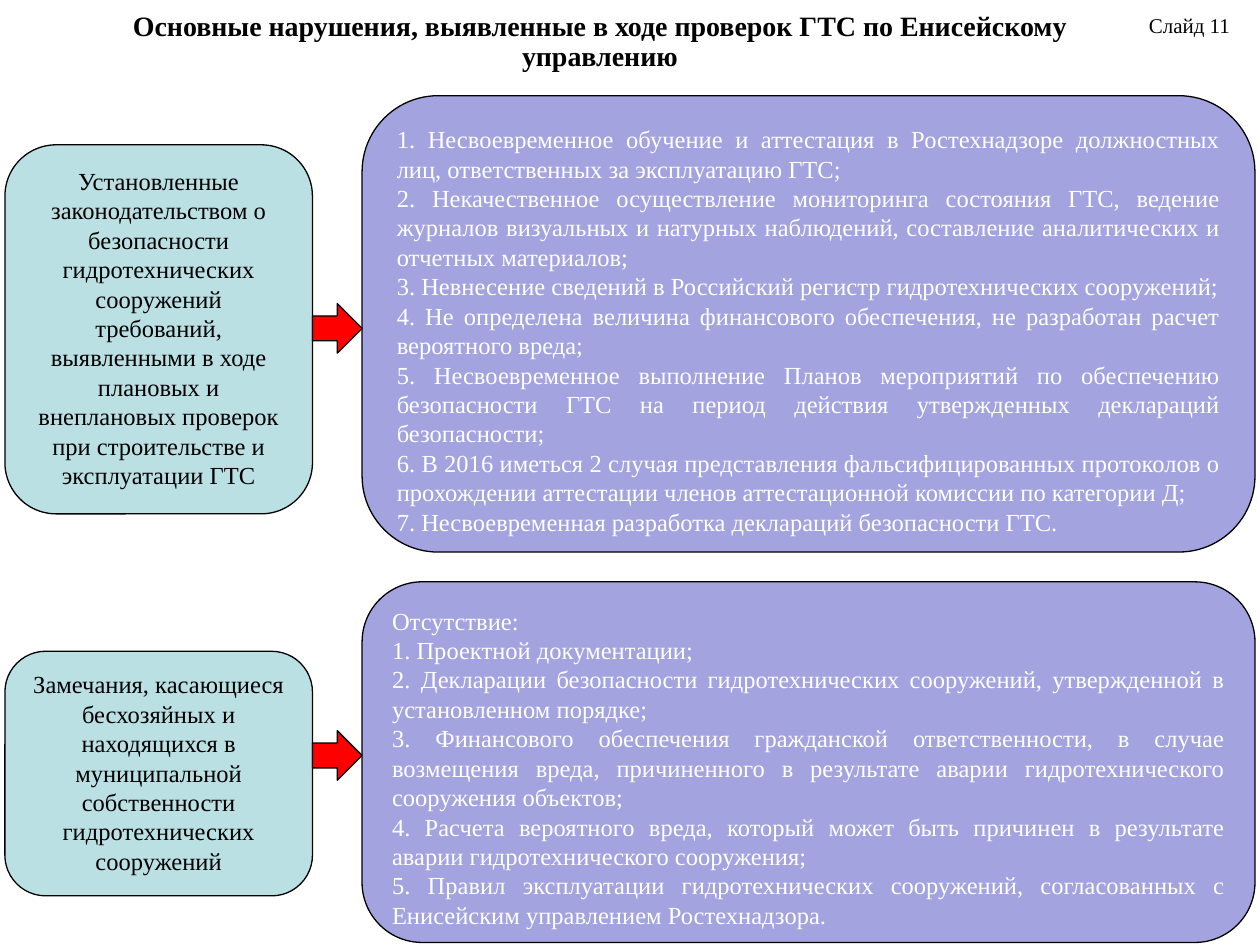
from pptx import Presentation
from pptx import util as u
from pptx.dml import color
from pptx.enum import shapes, text

COLORS = {
    "ink": "000000",
    "topic": "BBE0E3",
    "panel": "A3A3E0",
    "panel_text": "FFFFFF",
    "arrow": "FF0000",
}
FONT = "Times New Roman"


def write(frame, paragraphs, size, ink, align, bold=False, spacing=None):
    frame.word_wrap = True
    frame.vertical_anchor = text.MSO_ANCHOR.TOP
    for number, wording in enumerate(paragraphs):
        paragraph = frame.add_paragraph() if number else frame.paragraphs[0]
        paragraph.alignment = align
        if spacing:
            paragraph.line_spacing = spacing
        run = paragraph.add_run()
        run.text = wording
        run.font.name = FONT
        run.font.size = u.Pt(size)
        run.font.bold = bold
        run.font.color.rgb = color.RGBColor.from_string(COLORS[ink])


def add_block(kind, left, top, width, height, fill):
    block = slide.shapes.add_shape(kind, u.Cm(left), u.Cm(top), u.Cm(width), u.Cm(height))
    block.shadow.inherit = False
    block.fill.solid()
    block.fill.fore_color.rgb = color.RGBColor.from_string(COLORS[fill])
    block.line.color.rgb = color.RGBColor.from_string(COLORS["ink"])
    block.line.width = u.Pt(0.75)
    return block


prs = Presentation()
prs.slide_width, prs.slide_height = u.Cm(25.4), u.Cm(19.05)
slide = prs.slides.add_slide(prs.slide_layouts[6])

# Slide number and heading
slide_label = slide.shapes.add_textbox(u.Cm(22.91), u.Cm(0.13), u.Cm(2.41), u.Cm(0.91))
write(slide_label.text_frame, ["Слайд 11"], 12, "ink", text.PP_ALIGN.LEFT)

heading = slide.shapes.add_textbox(u.Cm(1.3), u.Cm(0.13), u.Cm(21.59), u.Cm(1.5))
write(heading.text_frame,
      ["Основные нарушения, выявленные в ходе проверок ГТС по Енисейскому управлению"],
      16, "ink", text.PP_ALIGN.CENTER, bold=True, spacing=0.9)

# Each row: topic, arrow and panel, with (top, height) of topic and panel
rows = [
    {
        "topic": "Установленные законодательством о безопасности гидротехнических "
                 "сооружений требований, выявленными в ходе плановых и внеплановых "
                 "проверок при строительстве и эксплуатации ГТС",
        "topic_span": (2.92, 7.44),
        "arrow_top": 6.12,
        "panel_span": (1.93, 9.2),
        "violations": [
            "1. Несвоевременное обучение и аттестация в Ростехнадзоре должностных лиц, "
            "ответственных за эксплуатацию ГТС;",
            "2. Некачественное осуществление мониторинга состояния ГТС, ведение журналов "
            "визуальных и натурных наблюдений, составление аналитических и отчетных материалов;",
            "3. Невнесение сведений в Российский регистр гидротехнических сооружений;",
            "4. Не определена величина финансового обеспечения, не разработан расчет "
            "вероятного вреда;",
            "5. Несвоевременное выполнение Планов мероприятий по обеспечению безопасности "
            "ГТС на период действия утвержденных деклараций безопасности;",
            "6. В 2016 иметься 2 случая представления фальсифицированных протоколов о "
            "прохождении аттестации членов аттестационной комиссии по категории Д;",
            "7. Несвоевременная разработка деклараций безопасности ГТС.",
        ],
    },
    {
        "topic": "Замечания, касающиеся бесхозяйных и находящихся в муниципальной "
                 "собственности гидротехнических сооружений",
        "topic_span": (13.13, 4.93),
        "arrow_top": 14.73,
        "panel_span": (11.73, 7.27),
        "violations": [
            "Отсутствие:",
            "1. Проектной документации;",
            "2. Декларации безопасности гидротехнических сооружений, утвержденной в "
            "установленном порядке;",
            "3. Финансового обеспечения гражданской ответственности, в случае возмещения "
            "вреда, причиненного в результате аварии гидротехнического сооружения объектов;",
            "4. Расчета вероятного вреда, который может быть причинен в результате аварии "
            "гидротехнического сооружения;",
            "5. Правил эксплуатации гидротехнических сооружений, согласованных с "
            "Енисейским управлением Ростехнадзора.",
        ],
    },
]

# Columns run edge to edge: topic, arrow, panel
topic_left, topic_width, arrow_size, panel_width = 0.1, 6.2, 1, 18
arrow_left = topic_left + topic_width
panel_left = arrow_left + arrow_size
rounded = shapes.MSO_SHAPE.ROUNDED_RECTANGLE

for row in rows:
    top, height = row["topic_span"]
    topic = add_block(rounded, topic_left, top, topic_width, height, "topic")
    write(topic.text_frame, [row["topic"]], 14, "ink", text.PP_ALIGN.CENTER)

    top, height = row["panel_span"]
    panel = add_block(rounded, panel_left, top, panel_width, height, "panel")
    write(panel.text_frame, row["violations"], 14, "panel_text", text.PP_ALIGN.JUSTIFY)

    add_block(shapes.MSO_SHAPE.RIGHT_ARROW, arrow_left, row["arrow_top"],
              arrow_size, arrow_size, "arrow")

prs.save("out.pptx")
